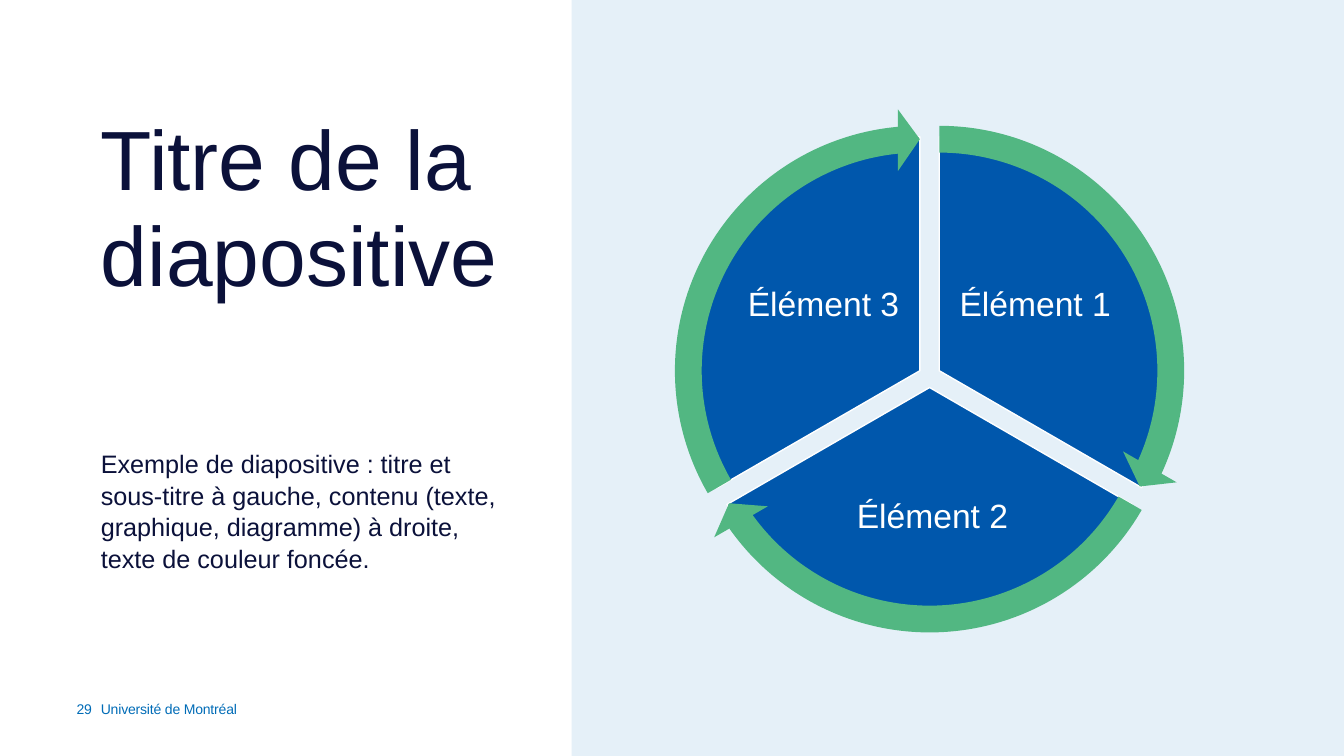
import math

import pptx
import pptx.util
import pptx.dml.color
import pptx.enum.shapes
import pptx.enum.text

Pt = pptx.util.Pt
Shape = pptx.enum.shapes.MSO_SHAPE
Align = pptx.enum.text.PP_ALIGN
Anchor = pptx.enum.text.MSO_ANCHOR

COLORS = {"panel": "E5F0F8", "sector": "0057AC", "arrow": "52B782",
          "white": "FFFFFF", "dark": "0B113A", "footer": "006CB7"}

TITLE = "Titre de la diapositive"
SUBTITLE = ("Exemple de diapositive : titre et sous-titre à gauche, contenu "
            "(texte, graphique, diagramme) à droite, texte de couleur foncée.")
FOOTER = "Université de Montréal"
PAGE_NUMBER = "29"
# Label and its box: left, top, width, height
SECTORS = [
    ("Élément 1", (679.7, 168.5, 119.5, 99.4)),
    ("Élément 2", (576.7, 326.2, 178.6, 87.1)),
    ("Élément 3", (528.5, 168.5, 119.5, 99.4)),
]

SLIDE_WIDTH, SLIDE_HEIGHT = 960, 540
PANEL_LEFT = 408.4
TEXT_LEFT, TEXT_WIDTH = 72, 298
FOOTER_TOP, FOOTER_HEIGHT = 500.4, 28.8
WHEEL_X, WHEEL_Y = 664, 268.8
SECTOR_SIZE, ARROW_SIZE, OFFSET = 334, 375, 8
SWEEP = 360 / len(SECTORS)
ANGLE_UNIT = 0.6  # adjustment value of one degree
ARROW_BAND, ARROW_TIP, ARROW_HEAD = 0.051, 3.275, 0.059


def rgb(name):
    return pptx.dml.color.RGBColor.from_string(COLORS[name])


def place(box, left, top, width, height):
    for name, value in zip(("left", "top", "width", "height"),
                           (left, top, width, height)):
        setattr(box, name, Pt(value))


def write(box, text, size, color, insets=(0, 0, 0, 0), anchor=Anchor.TOP,
          tracking=None, **paragraph_format):
    frame = box.text_frame
    left, top, right, bottom = insets
    frame_format = {"word_wrap": True, "vertical_anchor": anchor,
                    "auto_size": pptx.enum.text.MSO_AUTO_SIZE.NONE,
                    "margin_left": Pt(left), "margin_top": Pt(top),
                    "margin_right": Pt(right), "margin_bottom": Pt(bottom)}
    for name, value in frame_format.items():
        setattr(frame, name, value)
    para = frame.paragraphs[0]
    defaults = {"alignment": Align.LEFT, "space_before": Pt(0)}
    for name, value in {**defaults, **paragraph_format}.items():
        setattr(para, name, value)
    span = para.add_run()
    span.text = text
    for name, value in {"name": "Arial", "size": Pt(size)}.items():
        setattr(span.font, name, value)
    span.font.color.rgb = rgb(color)
    if tracking is not None:
        span.font._element.set("spc", str(tracking))


def add_filled(shapes, kind, bounds, fill, line=None):
    shape = shapes.add_shape(kind, *map(Pt, bounds))
    shape.shadow.inherit = False
    shape.fill.solid()
    shape.fill.fore_color.rgb = rgb(fill)
    if line:
        shape.line.color.rgb = rgb(line)
        shape.line.width = Pt(1)
    else:
        shape.line.fill.background()
    return shape


def adjust(shape, values):
    for index, value in enumerate(values):
        shape.adjustments[index] = value


def sector_angles(index):
    """Start and end of a sector, clockwise from the right, in degrees."""
    start = (270 + index * SWEEP) % 360
    return start, (start + SWEEP) % 360


def bounds_around(index, size):
    """Square pushed out from the wheel centre along the sector's middle."""
    middle = math.radians(sector_angles(index)[0] + SWEEP / 2)
    center_x = WHEEL_X + OFFSET * math.cos(middle)
    center_y = WHEEL_Y + OFFSET * math.sin(middle)
    return center_x - size / 2, center_y - size / 2, size, size


def add_wheel(page):
    wheel = page.shapes.add_group_shape().shapes
    for index, (label, label_bounds) in enumerate(SECTORS):
        sector = add_filled(wheel, Shape.PIE, bounds_around(index, SECTOR_SIZE),
                            "sector", "white")
        adjust(sector, [angle * ANGLE_UNIT for angle in sector_angles(index)])
        box = wheel.add_textbox(*map(Pt, label_bounds))
        write(box, label, 24, "white", (2, 2, 2, 2), Anchor.MIDDLE,
              alignment=Align.CENTER, line_spacing=0.9)
    for index in range(len(SECTORS)):
        start, end = (angle * ANGLE_UNIT for angle in sector_angles(index))
        arrow = add_filled(wheel, Shape.CIRCULAR_ARROW,
                           bounds_around(index, ARROW_SIZE), "arrow")
        adjust(arrow, [ARROW_BAND, ARROW_TIP, end - ARROW_TIP, start, ARROW_HEAD])


def main():
    deck = pptx.Presentation()
    deck.slide_width, deck.slide_height = Pt(SLIDE_WIDTH), Pt(SLIDE_HEIGHT)
    page = deck.slides.add_slide(deck.slide_layouts[0])
    add_filled(page.shapes, Shape.RECTANGLE,
               (PANEL_LEFT, 0, SLIDE_WIDTH - PANEL_LEFT, SLIDE_HEIGHT), "panel")
    add_wheel(page)

    title, subtitle = page.placeholders
    place(title, TEXT_LEFT, 81.4, TEXT_WIDTH, 223.2)
    write(title, TITLE, 60, "dark", line_spacing=0.95)
    place(subtitle, TEXT_LEFT, 310.3, TEXT_WIDTH, 108)
    write(subtitle, SUBTITLE, 18, "dark", (0, 9.4, 0, 0),
          line_spacing=1.04, space_after=Pt(6))

    footer = page.shapes.add_textbox(
        *map(Pt, (TEXT_LEFT, FOOTER_TOP, TEXT_WIDTH, FOOTER_HEIGHT)))
    write(footer, FOOTER, 10, "footer", tracking=-10)
    number = page.shapes.add_textbox(
        *map(Pt, (36, FOOTER_TOP, 32.4, FOOTER_HEIGHT)))
    write(number, PAGE_NUMBER, 10, "footer", (16, 0, 0, 0), tracking=-10,
          alignment=Align.CENTER)
    deck.save("out.pptx")


if __name__ == "__main__":
    main()
